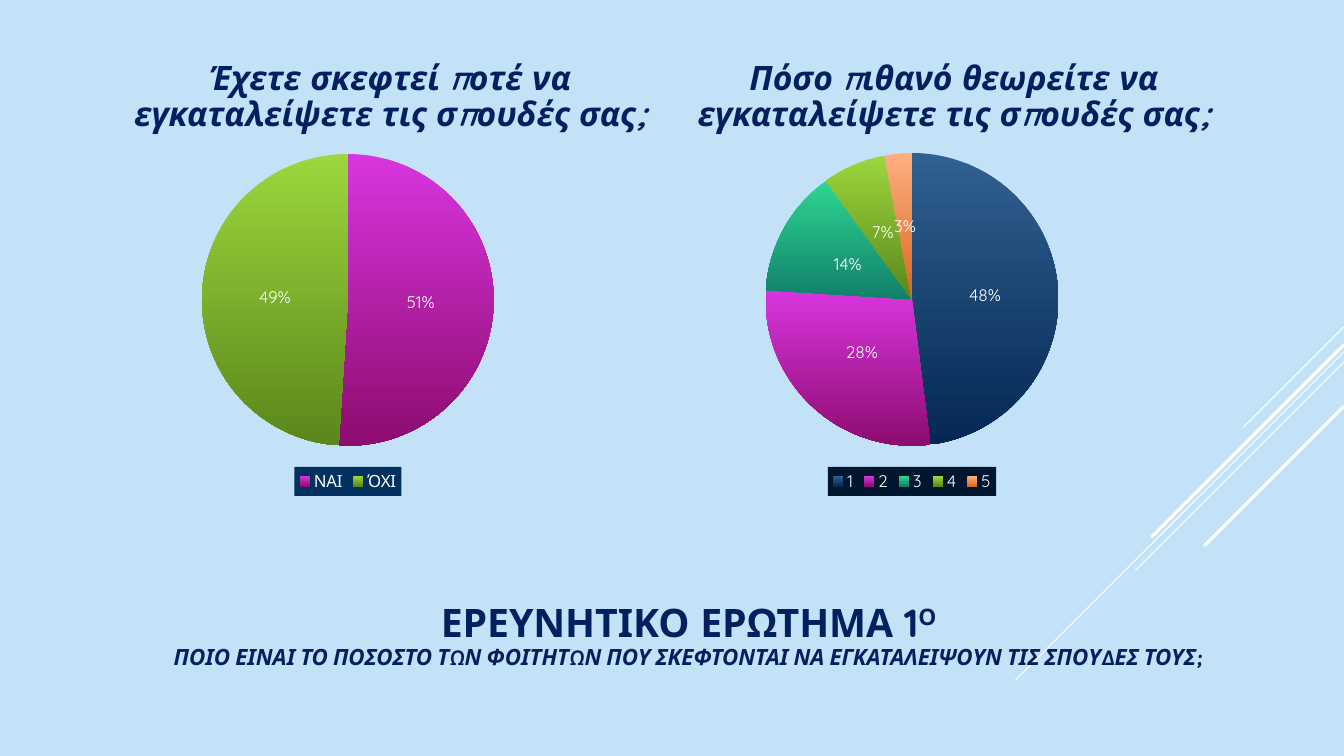
import pptx
import pptx.chart.data
import pptx.dml.color
import pptx.enum.chart
import pptx.enum.shapes
import pptx.enum.text
import pptx.oxml
import pptx.oxml.ns
import pptx.util
from pptx.util import Inches

WIDE, HIGH = 13.33, 7.5
NAVY = ("316190", "042853")
PINK = ("D835DF", "8D0C6F")
TEAL = ("2ED592", "11806A")
LIME = ("9DD63D", "5B871B")
PEACH = ("FFAE82", "D7681F")


def color(code):
    return pptx.dml.color.RGBColor.from_string(code)


def style(font, face="Quicksand", size=12, tint="FFFFFF", bold=False, slant=False):
    font.name = face
    font.size = pptx.util.Pt(size)
    font.color.rgb = color(tint)
    font.bold = bold
    font.italic = slant


def write(para, text, rise=0, **look):
    run = para.add_run()
    run.text = text
    style(run.font, **look)
    if rise:
        run.font._element.set("baseline", str(rise * 1000))


class Deck:
    ink = "002060"
    white = "FFFFFF"

    def __init__(self, back):
        self.show = pptx.Presentation()
        self.show.slide_width = Inches(WIDE)
        self.show.slide_height = Inches(HIGH)
        self.slide = self.show.slides.add_slide(self.show.slide_layouts[6])
        fill = self.slide.background.fill
        fill.solid()
        fill.fore_color.rgb = color(back)

    def ray(self, top, run, width):
        line = self.slide.shapes.add_connector(
            pptx.enum.shapes.MSO_CONNECTOR.STRAIGHT,
            Inches(WIDE), Inches(top), Inches(WIDE - run), Inches(top + run))
        line.line.color.rgb = color(self.white)
        line.line.width = pptx.util.Pt(width)
        props = line._element.spPr
        props.append(pptx.oxml.parse_xml(
            "<a:effectLst %s/>" % pptx.oxml.ns.nsdecls("a")))

    def box(self, area, anchor):
        frame = self.slide.shapes.add_textbox(*map(Inches, area)).text_frame
        frame.word_wrap = True
        frame.vertical_anchor = anchor
        para = frame.paragraphs[0]
        para.alignment = pptx.enum.text.PP_ALIGN.CENTER
        para.line_spacing = 0.9
        return para

    def title(self, area, head, mark, query):
        para = self.box(area, pptx.enum.text.MSO_ANCHOR.MIDDLE)
        write(para, head, size=28, tint=self.ink, bold=True)
        write(para, mark, rise=30, size=28, tint=self.ink, bold=True)
        para.add_line_break()
        write(para, query, face="Karla", size=16, tint=self.ink, bold=True, slant=True)

    def label(self, area, text):
        para = self.box(area, pptx.enum.text.MSO_ANCHOR.BOTTOM)
        para.space_after = pptx.util.Pt(6)
        write(para, text, size=24, tint=self.ink, bold=True, slant=True)

    def pie(self, area, parts, back):
        data = pptx.chart.data.CategoryChartData()
        data.categories = [name for name, _, _ in parts]
        data.add_series("Series 1", [value for _, value, _ in parts])
        chart = self.slide.shapes.add_chart(
            pptx.enum.chart.XL_CHART_TYPE.PIE, *map(Inches, area), data).chart
        chart.has_title = False
        style(chart.font, size=10)
        self.legend(chart, back)
        plot = chart.plots[0]
        plot.vary_by_categories = True
        plot.has_data_labels = True
        marks = plot.data_labels
        marks.show_value = False
        marks.show_percentage = True
        marks.number_format = "0%"
        marks.number_format_is_linked = False
        marks.position = pptx.enum.chart.XL_LABEL_POSITION.CENTER
        style(marks.font)
        for index, (_, _, shades) in enumerate(parts):
            fill = plot.series[0].points[index].format.fill
            fill.gradient()
            fill.gradient_angle = 270
            for place, (stop, shade) in enumerate(zip(fill.gradient_stops, shades)):
                stop.position = place
                stop.color.rgb = color(shade)

    def legend(self, chart, back):
        chart.has_legend = True
        key = chart.legend
        key.position = pptx.enum.chart.XL_LEGEND_POSITION.BOTTOM
        key.include_in_layout = False
        style(key.font)
        text = key._element.find(pptx.oxml.ns.qn("c:txPr"))
        text.addprevious(pptx.oxml.parse_xml(
            '<c:spPr %s><a:solidFill><a:srgbClr val="%s"/></a:solidFill></c:spPr>'
            % (pptx.oxml.ns.nsdecls("c", "a"), back)))


def main():
    deck = Deck("C3E2F7")
    for top, run, width in ((3.24, 1, 0.75), (3.49, 3.26, 0.75), (3.59, 2.07, 0.75),
                            (3.42, 1.91, 2.25), (4.03, 1.39, 2.25)):
        deck.ray(top, run, width)
    deck.title((0.75, 5.63, 12.16, 1.38), "ΕΡΕΥΝΗΤΙΚΟ ΕΡΩΤΗΜΑ 1", "Ο",
               "ΠΟΙΟ ΕΙΝΑΙ ΤΟ ΠΟΣΟΣΤΟ ΤΩΝ ΦΟΙΤΗΤΩΝ ΠΟΥ ΣΚΕΦΤΟΝΤΑΙ "
               "ΝΑ ΕΓΚΑΤΑΛΕΙΨΟΥΝ ΤΙΣ ΣΠΟΥΔΕΣ ΤΟΥΣ;")
    deck.label((1.06, 0.49, 5.62, 0.89),
               "Έχετε σκεφτεί ποτέ να εγκαταλείψετε τις σπουδές σας;")
    deck.pie((0.75, 1.39, 5.4, 3.53),
             (("ΝΑΙ", 51, PINK), ("ΌΧΙ", 49, LIME)), "02305F")
    deck.label((6.65, 0.14, 5.62, 1.24),
               "Πόσο πιθανό θεωρείτε να εγκαταλείψετε τις σπουδές σας;")
    deck.pie((6.35, 1.38, 5.39, 3.54),
             (("1", 48, NAVY), ("2", 28, PINK), ("3", 14, TEAL),
              ("4", 7, LIME), ("5", 3, PEACH)), "00152E")
    deck.show.save("out.pptx")


if __name__ == "__main__":
    main()
